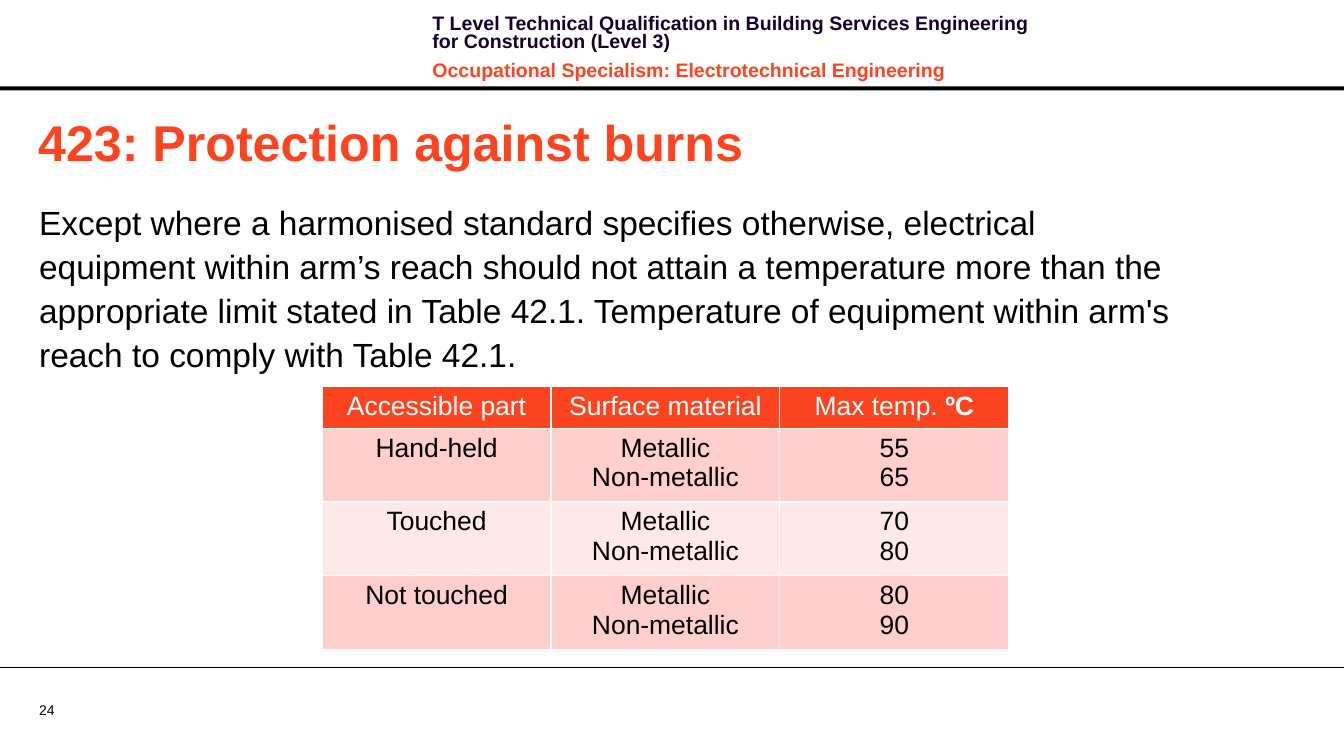
from dataclasses import dataclass

from lxml.etree import SubElement
from pptx import Presentation
from pptx.dml.color import RGBColor as RGB
from pptx.enum.shapes import MSO_CONNECTOR as Connector, MSO_SHAPE as Shape
from pptx.enum.text import MSO_ANCHOR as Anchor, MSO_AUTO_SIZE as AutoSize, PP_ALIGN as Align
from pptx.oxml.ns import qn
from pptx.util import Inches, Pt


@dataclass(frozen=True)
class Theme:
    """Colours, font and type sizes of the slide."""
    face: str = "Arial"
    accent: RGB = RGB(0xFC, 0x44, 0x21)
    navy: RGB = RGB(0x17, 0x01, 0x30)
    black: RGB = RGB(0, 0, 0)
    white: RGB = RGB(0xFF, 0xFF, 0xFF)
    bands: tuple = (RGB(0xFE, 0xCF, 0xCD), RGB(0xFE, 0xE9, 0xE8))
    title: int = 36
    body: int = 24
    table: int = 19
    header: int = 14
    number: int = 10


THEME = Theme()
WIDTH, HEIGHT = 13.39, 7.48
LIMITS = [
    ("Hand-held", "Metallic\nNon-metallic", "55\n65"),
    ("Touched", "Metallic\nNon-metallic", "70\n80"),
    ("Not touched", "Metallic\nNon-metallic", "80\n90"),
]


def style(paragraph, size, color, bold=False):
    """Set the font of a whole paragraph."""
    font = paragraph.font
    font.name, font.size, font.bold = THEME.face, Pt(size), bold
    font.color.rgb = color


def add_frame(slide, box, inset=(0, 0)):
    """Add a wrapping text box with the given side and top insets."""
    frame = slide.shapes.add_textbox(*map(Inches, box)).text_frame
    frame.word_wrap = True
    frame.margin_left = frame.margin_right = Inches(inset[0])
    frame.margin_top = frame.margin_bottom = Inches(inset[1])
    return frame


def add_header(slide, box):
    """Place the course lines and the thick rule that closes the header."""
    left, top, width, height = box
    rule = slide.shapes.add_shape(
        Shape.RECTANGLE, Inches(left), Inches(top + height - 0.04), Inches(width), Inches(0.04))
    rule.shadow.inherit = False
    rule.fill.solid()
    rule.fill.fore_color.rgb = THEME.black
    rule.line.fill.background()

    course = add_frame(slide, (left + 4.21, top + 0.11, 6.37, 0.64), (0.1, 0.05))
    course.text = ("T Level Technical Qualification in Building Services Engineering "
                   "for Construction (Level 3)\n"
                   "Occupational Specialism: Electrotechnical Engineering")
    for line, color in zip(course.paragraphs, (THEME.navy, THEME.accent)):
        line.line_spacing, line.space_after = Pt(13.1), Pt(4)
        style(line, THEME.header, color, True)
    course.paragraphs[1].space_before = Pt(4)


def add_title(slide, box):
    """Place the slide title in its placeholder."""
    title = slide.shapes.title
    title.left, title.top, title.width, title.height = map(Inches, box)
    frame = title.text_frame
    frame.text = "423: Protection against burns"
    frame.vertical_anchor, frame.auto_size = Anchor.MIDDLE, AutoSize.NONE
    heading = frame.paragraphs[0]
    heading.alignment = Align.LEFT
    style(heading, THEME.title, THEME.accent, True)


def add_rule_text(slide, box):
    """Place the paragraph that states the regulation."""
    frame = add_frame(slide, box)
    frame.text = (
        "Except where a harmonised standard specifies otherwise, electrical equipment within "
        "arm’s reach should not attain a temperature more than the appropriate limit stated in "
        "Table 42.1. Temperature of equipment within arm's reach to comply with Table 42.1.")
    regulation = frame.paragraphs[0]
    regulation.line_spacing = 1.1
    style(regulation, THEME.body, THEME.black)


def fill_cell(cell, text, fill, color):
    """Write centred text in a table cell and colour it."""
    cell.fill.solid()
    cell.fill.fore_color.rgb = fill
    cell.text = text
    for paragraph in cell.text_frame.paragraphs:
        paragraph.alignment = Align.CENTER
        style(paragraph, THEME.table, color)


def add_limits_table(slide, box):
    """Place the table of temperature limits, with rows in alternating bands."""
    heads = ("Accessible part", "Surface material", "Max temp. ")
    table = slide.shapes.add_table(len(LIMITS) + 1, len(heads), *map(Inches, box)).table
    head_height = 0.4
    table.rows[0].height = Inches(head_height)
    for column, head in enumerate(heads):
        table.columns[column].width = Inches(box[2] / len(heads))
        fill_cell(table.cell(0, column), head, THEME.accent, THEME.white)
    unit = table.cell(0, len(heads) - 1).text_frame.paragraphs[0].add_run()
    unit.text, unit.font.bold = "ºC", True

    for row, limits in enumerate(LIMITS, 1):
        table.rows[row].height = Inches((box[3] - head_height) / len(LIMITS))
        band = THEME.bands[(row - 1) % 2]
        for column, text in enumerate(limits):
            fill_cell(table.cell(row, column), text, band, THEME.black)


def add_footer(slide, box):
    """Place the thin rule and the slide number below it."""
    left, top, width, _ = box
    rule = slide.shapes.add_connector(
        Connector.STRAIGHT, Inches(left), Inches(top), Inches(left + width), Inches(top))
    rule.line.color.rgb, rule.line.width = THEME.black, Pt(0.75)
    SubElement(rule.element.spPr, qn("a:effectLst"))

    frame = add_frame(slide, (left + 0.39, top + 0.34, 0.64, 0.17))
    frame.vertical_anchor = Anchor.MIDDLE
    frame.text = "24"
    style(frame.paragraphs[0], THEME.number, THEME.black)


def main():
    """Build the slide and save it."""
    deck = Presentation()
    deck.slide_width, deck.slide_height = Inches(WIDTH), Inches(HEIGHT)
    slide = deck.slides.add_slide(deck.slide_layouts.get_by_name("Title Only"))
    add_header(slide, (0, 0, WIDTH, 0.9))
    add_title(slide, (0.28, 1.05, 12.72, 0.71))
    add_rule_text(slide, (0.39, 1.97, 11.32, 1.8))
    add_limits_table(slide, (3.21, 3.85, 6.84, 2.53))
    add_footer(slide, (0, 6.65, WIDTH, HEIGHT - 6.65))
    deck.save("out.pptx")


if __name__ == "__main__":
    main()
